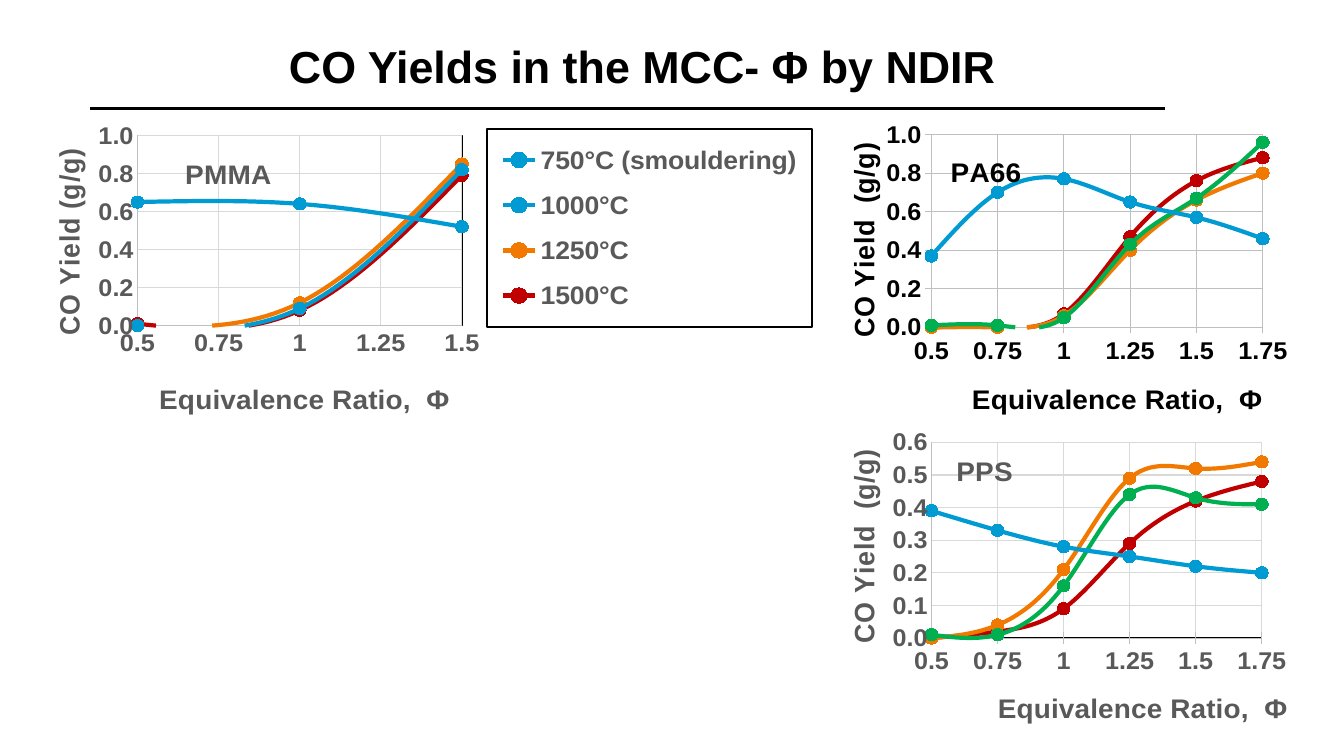
from lxml.etree import SubElement
from pptx import Presentation
from pptx.chart.data import XyChartData
from pptx.dml.color import RGBColor
from pptx.enum.chart import XL_CHART_TYPE, XL_LEGEND_POSITION, XL_MARKER_STYLE, XL_TICK_MARK
from pptx.enum.shapes import MSO_CONNECTOR
from pptx.enum.text import MSO_ANCHOR, PP_ALIGN
from pptx.oxml import parse_xml
from pptx.oxml.ns import nsdecls, qn
from pptx.util import Pt

FACE = "Arial"
BLACK, GREY = "000000", "595959"
BLUE, GREEN, ORANGE, RED = "009BD2", "00B050", "F27900", "C00000"
X_TITLE = "Equivalence Ratio,  Φ"
SERIES = [("Series 1", BLUE), ("Series 2", GREEN), ("Series 3", ORANGE), ("Series 4", RED)]
HEATS = [("750°C (smouldering)", BLUE), ("1000°C", BLUE), ("1250°C", ORANGE), ("1500°C", RED)]

PMMA = dict(
    name="PMMA", box=(23.8, 87.1, 563.8, 215.3), plot=(0.132, 0.04, 0.411, 0.661),
    y_title="CO Yield (g/g)", ink=GREY, grid="D9D9D9", axis="BFBFBF",
    x_max=1.5, y_max=1, y_step=0.2, ticks=(XL_TICK_MARK.NONE, XL_TICK_MARK.NONE),
    spots=((0.186, 0.1), (0.153, 0.88), (0.016, 0.097)),
    xs=[0.5, 1, 1.5], series=HEATS, legend=(0.575, 0.017, 0.412, 0.688),
    rows=[[0.65, 0.64, 0.52], [0, 0.09, 0.82], [0, 0.12, 0.85], [0.01, 0.08, 0.79]])
PA66 = dict(
    name="PA66", box=(594, 86.4, 329.8, 216), plot=(0.216, 0.047, 0.718, 0.663),
    y_title="CO Yield  (g/g)", ink=BLACK, grid="BFBFBF", axis="BFBFBF",
    x_max=1.75, y_max=1, y_step=0.2, ticks=(XL_TICK_MARK.OUTSIDE, XL_TICK_MARK.OUTSIDE),
    spots=((0.247, 0.1), (0.293, 0.88), (0.02, 0.083)),
    xs=[0.5, 0.75, 1, 1.25, 1.5, 1.75], series=SERIES, legend=None,
    rows=[[0.37, 0.7, 0.77, 0.65, 0.57, 0.46], [0.01, 0.01, 0.05, 0.43, 0.67, 0.96],
          [0, 0, 0.06, 0.4, 0.66, 0.8], [0, 0, 0.07, 0.47, 0.76, 0.88]])
PPS = dict(
    name="PPS", box=(594, 306, 329.8, 217.4), plot=(0.217, 0.048, 0.717, 0.67),
    y_title="CO Yield  (g/g)", ink=GREY, grid="D9D9D9", axis="BFBFBF",
    x_max=1.75, y_max=0.6, y_step=0.1, ticks=(XL_TICK_MARK.CROSS, XL_TICK_MARK.NONE),
    spots=((0.26, 0.07), (0.35, 0.883), (0.02, 0.078)),
    xs=[0.5, 0.75, 1, 1.25, 1.5, 1.75], series=SERIES, legend=None,
    rows=[[0.39, 0.33, 0.28, 0.25, 0.22, 0.2], [0.01, 0.01, 0.16, 0.44, 0.43, 0.41],
          [0, 0.04, 0.21, 0.49, 0.52, 0.54], [0, 0.02, 0.09, 0.29, 0.42, 0.48]])


def color(code):
    return RGBColor.from_string(code)


def style(font, size, ink):
    font.name, font.size, font.bold = FACE, Pt(size), True
    font.color.rgb = color(ink)


def stroke(line, ink, width):
    line.color.rgb = color(ink)
    line.width = Pt(width)


def write(frame, text, size, ink):
    para = frame.paragraphs[0]
    run = para.add_run()
    run.text = text
    style(run.font, size, ink)
    return para


def place(node, index, spot, inner=False):
    """Give a chart part a manual layout, in fractions of the chart."""
    for old in node.findall(qn("c:layout")):
        node.remove(old)
    layout = parse_xml(f"<c:layout {nsdecls('c')}><c:manualLayout/></c:layout>")
    parts = [("layoutTarget", "inner")] if inner else []
    parts += [("xMode", "edge"), ("yMode", "edge"), *zip("xywh", spot)]
    for tag, value in parts:
        SubElement(layout[0], qn(f"c:{tag}"), val=str(value))
    node.insert(index, layout)


def label(title, text, spot, ink, turn=0):
    para = write(title.text_frame, text, 20, ink)
    node = para._p.getparent().getparent().getparent()
    body = node.find(f".//{qn('a:bodyPr')}")
    body.set("rot", str(turn * 60000))
    body.set("vert", "horz")
    place(node, 1, spot)


def scale(axis, low, high, step, tick, look):
    axis.minimum_scale, axis.maximum_scale, axis.major_unit = low, high, step
    axis.major_tick_mark, axis.minor_tick_mark = tick, XL_TICK_MARK.NONE
    axis.has_major_gridlines = True
    stroke(axis.major_gridlines.format.line, look["grid"], 0.75)
    stroke(axis.format.line, look["axis"], 0.75)
    style(axis.tick_labels.font, 18, look["ink"])


def paint(series, ink):
    stroke(series.format.line, ink, 3)
    mark = series.marker
    mark.style, mark.size = XL_MARKER_STYLE.CIRCLE, 9
    mark.format.fill.solid()
    mark.format.fill.fore_color.rgb = color(ink)
    stroke(mark.format.line, ink, 0.75)
    series._element.find(qn("c:smooth")).set("val", "1")


def add_key(chart, spot):
    chart.has_legend = True
    key = chart.legend
    key.position = XL_LEGEND_POSITION.RIGHT
    key.include_in_layout = False
    style(key.font, 19, GREY)
    place(key._element, 1, spot)
    key._element.find(qn("c:txPr")).addprevious(frame_of(1.25))


def frame_of(width):
    """Black outline without fill, for a chart part."""
    return parse_xml(
        f"<c:spPr {nsdecls('c', 'a')}><a:noFill/><a:ln w=\"{Pt(width)}\"><a:solidFill>"
        f"<a:srgbClr val=\"{BLACK}\"/></a:solidFill></a:ln></c:spPr>")


def add_graph(slide, look):
    data = XyChartData()
    for (name, _), row in zip(look["series"], look["rows"]):
        line = data.add_series(name)
        for x, y in zip(look["xs"], row):
            line.add_data_point(x, y)
    box = [Pt(v) for v in look["box"]]
    chart = slide.shapes.add_chart(XL_CHART_TYPE.XY_SCATTER_SMOOTH, *box, data).chart
    chart.font.name, chart.font.size = FACE, Pt(10)
    chart.font.color.rgb = color(BLACK)
    chart.has_legend = False
    plot = chart.plots[0]
    plot.vary_by_categories = False
    for series, (_, ink) in zip(plot.series, look["series"]):
        paint(series, ink)

    across, up = chart.category_axis, chart.value_axis
    scale(across, 0.5, look["x_max"], 0.25, look["ticks"][0], look)
    scale(up, 0, look["y_max"], look["y_step"], look["ticks"][1], look)
    for axis, code in ((across, "General"), (up, "0.0")):
        axis.tick_labels.number_format = code
        axis.tick_labels.number_format_is_linked = False

    head, foot, side = look["spots"]
    label(chart.chart_title, look["name"], head, look["ink"])
    label(across.axis_title, X_TITLE, foot, look["ink"])
    label(up.axis_title, look["y_title"], side, look["ink"], -90)
    area = plot._element.getparent()
    place(area, 0, look["plot"], inner=True)
    area.append(frame_of(1))
    if look["legend"]:
        add_key(chart, look["legend"])


def add_title(slide, text):
    box = slide.shapes.add_textbox(Pt(90), Pt(23.8), Pt(738), Pt(46))
    frame = box.text_frame
    frame.word_wrap = True
    frame.vertical_anchor = MSO_ANCHOR.MIDDLE
    write(frame, text, 32, BLACK).alignment = PP_ALIGN.CENTER


def add_rule(slide, left, right, top):
    rule = slide.shapes.add_connector(
        MSO_CONNECTOR.STRAIGHT, Pt(left), Pt(top), Pt(right), Pt(top))
    stroke(rule.line, BLACK, 2.25)
    SubElement(rule._element.spPr, qn("a:effectLst"))


def main():
    deck = Presentation()
    deck.slide_width, deck.slide_height = Pt(960), Pt(540)
    slide = deck.slides.add_slide(deck.slide_layouts[6])
    add_rule(slide, 64, 832.3, 77.8)
    add_title(slide, "CO Yields in the MCC- Φ by NDIR")
    for look in (PMMA, PA66, PPS):
        add_graph(slide, look)
    deck.save("out.pptx")


if __name__ == "__main__":
    main()
